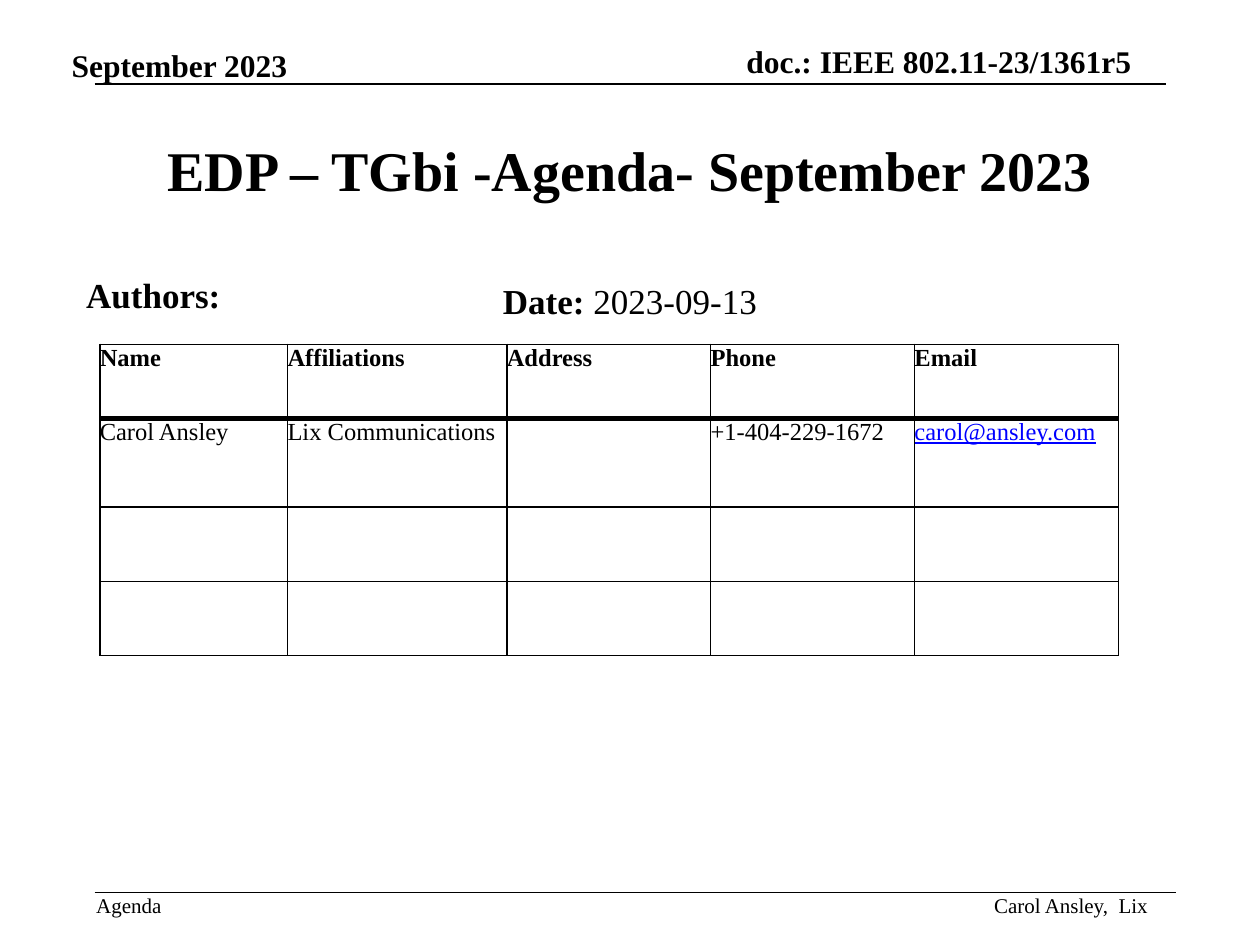
import dataclasses
import typing

import pptx
import pptx.dml.color
import pptx.enum.shapes
import pptx.enum.text
import pptx.oxml
import pptx.oxml.ns
import pptx.util

Pt = pptx.util.Pt
Align = pptx.enum.text.PP_ALIGN
Anchor = pptx.enum.text.MSO_ANCHOR

FONT = "Times New Roman"
BLACK = "000000"
LINK_BLUE = "0000FF"
THIN, THICK = 0.96, 3
HANGING = 26.6


@dataclasses.dataclass(frozen=True)
class Label:
    text: str
    left: float
    top: float
    width: float
    height: float
    size: float
    bold: bool = False
    align: Align = Align.LEFT
    anchor: Anchor = Anchor.TOP
    inset: float = 0
    wrap: bool = False
    hanging: bool = False
    plain_tail: str = ""


@dataclasses.dataclass(frozen=True)
class Rule:
    left: float
    right: float
    top: float


LABELS = [
    Label("September 2023", 41, 26.4, 124.5, 21.6, 18, bold=True, anchor=Anchor.BOTTOM),
    Label("doc.: IEEE 802.11-23/1361r5", 423.5, 23.8, 223, 21.6, 18, bold=True,
          align=Align.RIGHT, anchor=Anchor.BOTTOM),
    Label("Agenda", 55, 510, 38, 14.4, 12),
    Label("Carol Ansley,  Lix", 536, 510, 120, 14.4, 12,
          align=Align.RIGHT, anchor=Anchor.BOTTOM),
    Label("EDP – TGbi -Agenda- September 2023", 54, 73.5, 612, 46, 32, bold=True,
          align=Align.CENTER, anchor=Anchor.MIDDLE, inset=3.6, wrap=True),
    Label("Date: ", 54, 156.2, 612, 31.7, 20, bold=True, align=Align.CENTER,
          inset=3.6, wrap=True, hanging=True, plain_tail="2023-09-13"),
    Label("Authors:", 45.6, 152.6, 106.6, 29.5, 20, bold=True,
          inset=3.6, wrap=True, hanging=True),
]
RULES = [Rule(54, 666, 48), Rule(54, 672, 510)]

COLUMN_WIDTHS = [107.3, 125.3, 116.5, 116.5, 116.5]
ROW_HEIGHTS = [42.4, 50.6, 42.4, 42.4]
AUTHOR_ROWS = [
    ["Name", "Affiliations", "Address", "Phone", "Email"],
    ["Carol Ansley", "Lix Communications", "", "+1-404-229-1672", "carol@ansley.com"],
    [""] * 5,
    [""] * 5,
]


def color(value: str) -> pptx.dml.color.RGBColor:
    return pptx.dml.color.RGBColor.from_string(value)


def style_font(font: typing.Any, size: float, bold: bool, shade: str = BLACK) -> None:
    font.name = FONT
    font.size = Pt(size)
    font.bold = bold
    font.color.rgb = color(shade)


def set_insets(area: typing.Any, inset: float) -> None:
    area.margin_left = area.margin_right = Pt(inset)
    area.margin_top = area.margin_bottom = Pt(inset)


def draw_label(page: typing.Any, label: Label) -> None:
    box = page.shapes.add_textbox(
        Pt(label.left), Pt(label.top), Pt(label.width), Pt(label.height))
    frame = box.text_frame
    frame.word_wrap = label.wrap
    frame.vertical_anchor = label.anchor
    set_insets(frame, label.inset)
    para = frame.paragraphs[0]
    para.alignment = label.align
    style_font(para.font, label.size, label.bold)
    para.add_run().text = label.text
    if label.plain_tail:
        span = para.add_run()
        span.text = label.plain_tail
        span.font.bold = False
    if label.hanging:
        para.space_before = Pt(4)
        properties = para._p.get_or_add_pPr()
        properties.set("marL", str(Pt(HANGING)))
        properties.set("indent", str(-Pt(HANGING)))


def draw_rule(page: typing.Any, rule: Rule) -> None:
    line = page.shapes.add_connector(
        pptx.enum.shapes.MSO_CONNECTOR.STRAIGHT,
        Pt(rule.left), Pt(rule.top), Pt(rule.right), Pt(rule.top))
    line.line.width = Pt(1)
    line.line.color.rgb = color(BLACK)
    line._element.spPr.append(pptx.oxml.parse_xml(
        f'<a:effectLst {pptx.oxml.ns.nsdecls("a")}/>'))


def set_borders(cell: typing.Any, top: float, bottom: float) -> None:
    properties = cell._tc.get_or_add_tcPr()
    for side, width in zip("LRTB", (THIN, THIN, top, bottom)):
        properties.append(pptx.oxml.parse_xml(
            f'<a:ln{side} {pptx.oxml.ns.nsdecls("a")} w="{Pt(width)}">'
            f'<a:solidFill><a:srgbClr val="{BLACK}"/></a:solidFill></a:ln{side}>'))


def draw_authors(page: typing.Any, left: float, top: float) -> None:
    table = page.shapes.add_table(
        len(ROW_HEIGHTS), len(COLUMN_WIDTHS), Pt(left), Pt(top),
        Pt(sum(COLUMN_WIDTHS)), Pt(sum(ROW_HEIGHTS))).table
    table.horz_banding = False
    for column, width in zip(table.columns, COLUMN_WIDTHS):
        column.width = Pt(width)
    for row, height in zip(table.rows, ROW_HEIGHTS):
        row.height = Pt(height)
    for row_index, texts in enumerate(AUTHOR_ROWS):
        for column_index, text in enumerate(texts):
            cell = table.cell(row_index, column_index)
            cell.text = text
            set_insets(cell, 0)
            set_borders(cell, THICK if row_index == 1 else THIN,
                        THICK if row_index == 0 else THIN)
            cell.fill.background()
            is_email = "@" in text
            font = cell.text_frame.paragraphs[0].font
            style_font(font, 14, row_index == 0, LINK_BLUE if is_email else BLACK)
            font.underline = is_email


def main() -> None:
    deck = pptx.Presentation()
    deck.slide_width, deck.slide_height = Pt(720), Pt(540)
    page = deck.slides.add_slide(deck.slide_layouts[6])
    for rule in RULES:
        draw_rule(page, rule)
    for label in LABELS:
        draw_label(page, label)
    draw_authors(page, 57, 196.8)
    deck.save("out.pptx")


if __name__ == "__main__":
    main()
